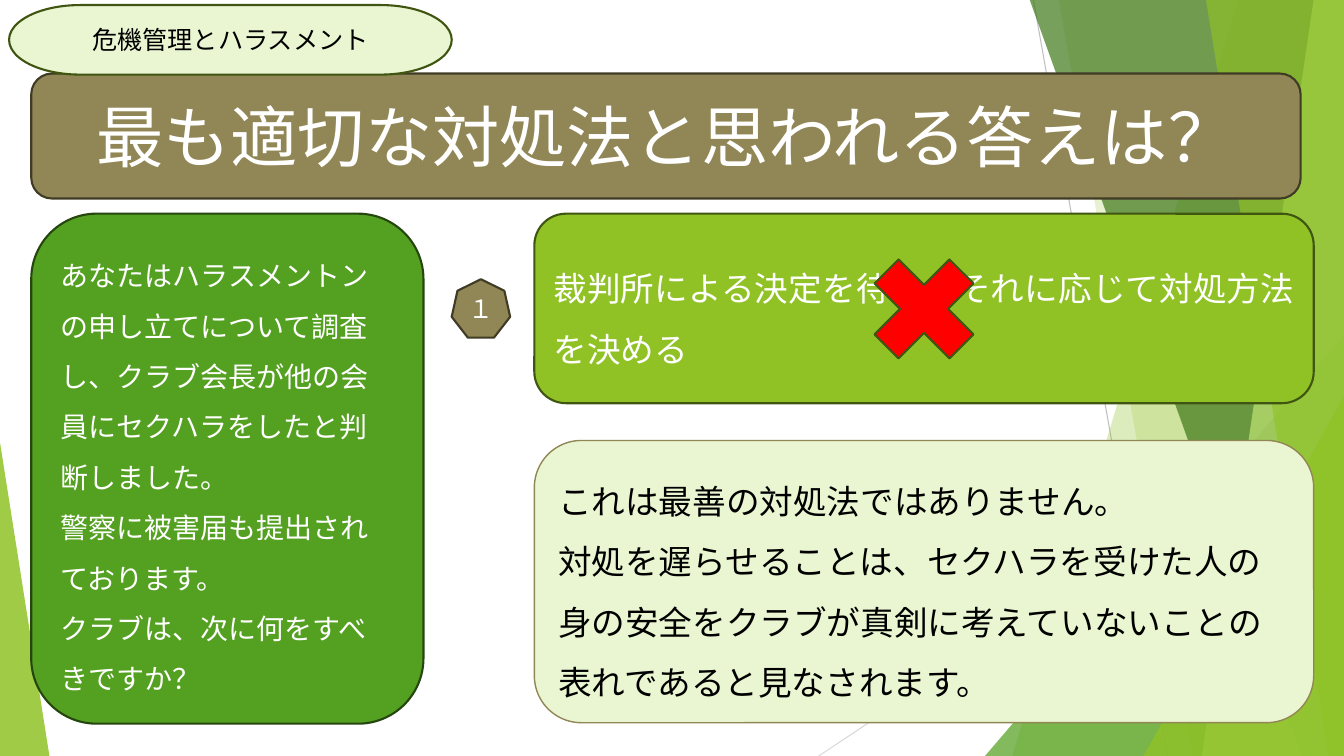
import pptx
import pptx.dml.color
import pptx.enum.shapes
import pptx.enum.text
import pptx.oxml
import pptx.oxml.ns
import pptx.util
from lxml import etree

PX = 9144  # 100 px to the inch
WIDTH, HEIGHT = 1333, 750
FONT = "Noto Sans CJK JP"
SHAPE = pptx.enum.shapes.MSO_SHAPE
ALIGN = pptx.enum.text.PP_ALIGN

# start x, start y, end x, end y, colour
RAYS = [(1025, 0, 1158, 750, "BFBFBF"), (1333, 403, 812, 750, "D9D9D9")]

# Bands reach the right edge: top x, bottom x, colour, opacity %
BANDS_BACK = [(1228, 1004, "90C226", 30), (1050, 1183, "90C226", 20)]
BANDS_FRONT = [(1021, 1291, "3F7819", 70), (1303, 1192, "C0E474", 70), (1196, 1318, "90C226", 65)]

# left, top, width, apex position, colour, opacity %; all stand on the bottom edge
TRIANGLE_BACK = (977, 333, 356, 1, "54A021", 72)
TRIANGLES_FRONT = [(1134, 393, 199, 1, "90C226", 80), (0, 439, 49, 0, "90C226", 85)]

CASE = [
    "あなたはハラスメントンの申し立てについて調査し、クラブ会長が他の会員にセクハラをしたと判断しました。",
    "警察に被害届も提出されております。",
    "クラブは、次に何をすべきですか？",
]
ANSWER = ["裁判所による決定を待ち、それに応じて対処方法を決める"]
COMMENT = [
    "これは最善の対処法ではありません。",
    "対処を遅らせることは、セクハラを受けた人の身の安全をクラブが真剣に考えていないことの表れであると見なされます。",
]

# preset, (left, top, width, height), fill, line, line pt, lines of text,
# (size, colour, alignment, line spacing, font)
PANELS = [
    (SHAPE.ROUNDED_RECTANGLE, (31, 212, 389, 506), "54A021", "25460E", 1.5, CASE,
     (20, "FFFFFF", ALIGN.LEFT, 1.5, FONT)),
    (SHAPE.ROUNDED_RECTANGLE, (530, 212, 773, 188), "90C226", "3F5511", 1.5, ANSWER,
     (24, "FFFFFF", ALIGN.JUSTIFY, 1.5, FONT)),
    (SHAPE.HEPTAGON, (448, 277, 58, 58), "918655", "403B25", 1.5, ["１"],
     (18, "FFFFFF", ALIGN.CENTER, 1.0, FONT)),
    (SHAPE.ROUNDED_RECTANGLE, (31, 73, 1259, 124), "918655", "403B25", 1.5,
     ["最も適切な対処法と思われる答えは？"], (48, "FFFFFF", ALIGN.CENTER, 1.0, FONT)),
    (SHAPE.ROUNDED_RECTANGLE, (530, 437, 773, 280), "EAF6D1", "918655", 1, COMMENT,
     (24, "000000", ALIGN.LEFT, 1.5, FONT)),
    (SHAPE.MATH_MULTIPLY, (845, 235, 143, 143), "FF0000", "3F5511", 1.5, [], None),
    (SHAPE.FLOWCHART_TERMINATOR, (9, 5, 439, 69), "EAF6D1", "3F5511", 1.5,
     ["危機管理とハラスメント"], (18, "000000", ALIGN.CENTER, 1.0, "Roboto")),
]


def rgb(value):
    return pptx.dml.color.RGBColor.from_string(value)


def emu(lengths):
    return [length * PX for length in lengths]


def paint(shape, colour, opacity=100):
    shape.shadow.inherit = False
    shape.fill.solid()
    shape.fill.fore_color.rgb = rgb(colour)
    if opacity < 100:
        solid = shape.fill._xPr.find(pptx.oxml.ns.qn("a:solidFill"))
        alpha = etree.SubElement(solid[0], pptx.oxml.ns.qn("a:alpha"))
        alpha.set("val", str(opacity * 1000))


def add_ray(page, x1, y1, x2, y2, colour):
    ray = page.shapes.add_connector(
        pptx.enum.shapes.MSO_CONNECTOR.STRAIGHT, *emu((x1, y1, x2, y2)))
    ray.line.color.rgb = rgb(colour)
    ray.line.width = pptx.util.Pt(0.75)
    etree.SubElement(ray._element.spPr, pptx.oxml.ns.qn("a:effectLst"))


def add_band(page, top_x, bottom_x, colour, opacity):
    builder = page.shapes.build_freeform(top_x, -1, scale=PX)
    builder.add_line_segments([(WIDTH, -1), (WIDTH, HEIGHT), (bottom_x, HEIGHT)], close=True)
    band = builder.convert_to_shape()
    paint(band, colour, opacity)
    band.line.fill.background()


def add_triangle(page, left, top, width, apex, colour, opacity):
    triangle = page.shapes.add_shape(
        SHAPE.ISOSCELES_TRIANGLE, *emu((left, top, width, HEIGHT - top)))
    triangle.adjustments[0] = apex
    paint(triangle, colour, opacity)
    triangle.line.fill.background()


def write(frame, lines, size, colour, alignment, spacing, font):
    frame.word_wrap = True
    frame.vertical_anchor = pptx.enum.text.MSO_ANCHOR.MIDDLE
    for index, line in enumerate(lines):
        para = frame.add_paragraph() if index else frame.paragraphs[0]
        para.text = line
        para.alignment = alignment
        para.line_spacing = spacing
        para.font.size = pptx.util.Pt(size)
        para.font.color.rgb = rgb(colour)
        para.font.name = font
        latin = para.font._rPr.find(pptx.oxml.ns.qn("a:latin"))
        east_asian = etree.Element(pptx.oxml.ns.qn("a:ea"), typeface=FONT)
        latin.addnext(east_asian)


def add_panel(page, preset, place, fill, line, weight, lines, style):
    panel = page.shapes.add_shape(preset, *emu(place))
    paint(panel, fill)
    panel.line.color.rgb = rgb(line)
    panel.line.width = pptx.util.Pt(weight)
    if lines:
        write(panel.text_frame, lines, *style)


def main():
    deck = pptx.Presentation()
    deck.slide_width, deck.slide_height = emu((WIDTH, HEIGHT))
    page = deck.slides.add_slide(deck.slide_layouts[6])
    for ray in RAYS:
        add_ray(page, *ray)
    for band in BANDS_BACK:
        add_band(page, *band)
    add_triangle(page, *TRIANGLE_BACK)
    for band in BANDS_FRONT:
        add_band(page, *band)
    for triangle in TRIANGLES_FRONT:
        add_triangle(page, *triangle)
    for panel in PANELS:
        add_panel(page, *panel)
    deck.save("out.pptx")


if __name__ == "__main__":
    main()
